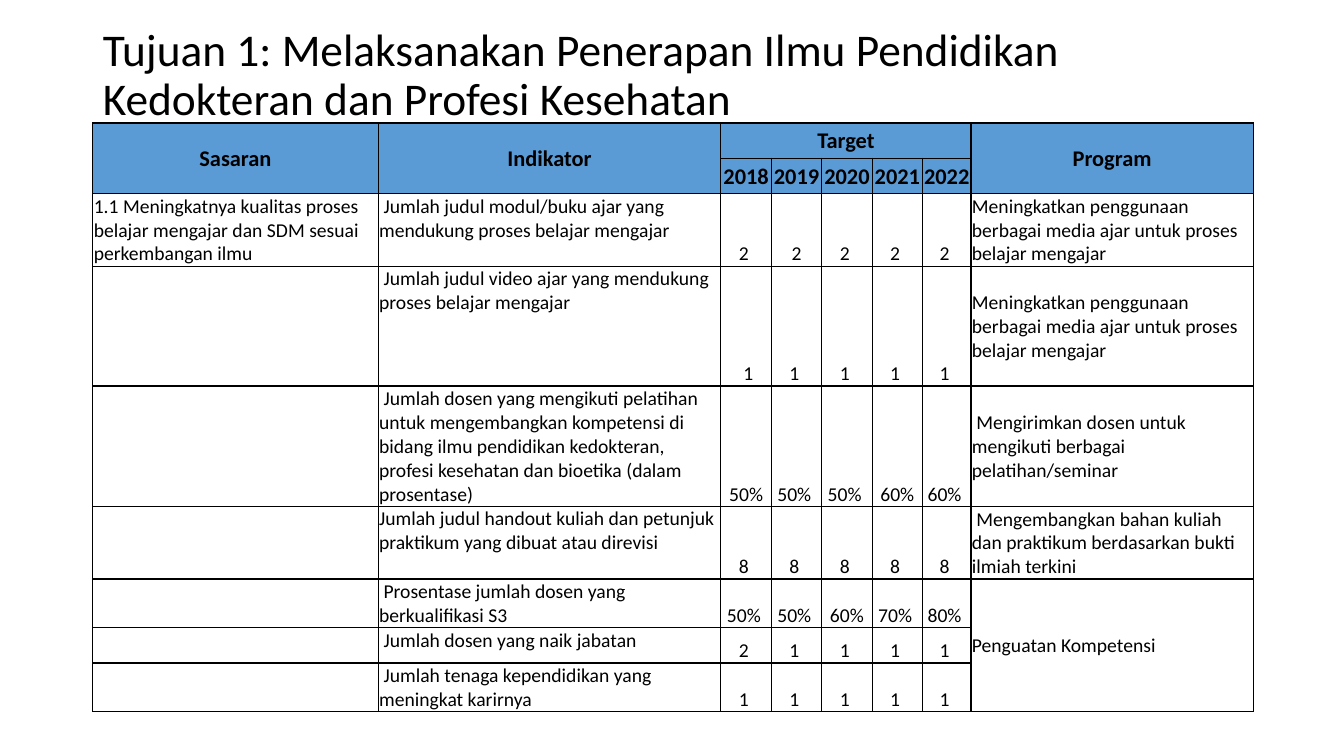
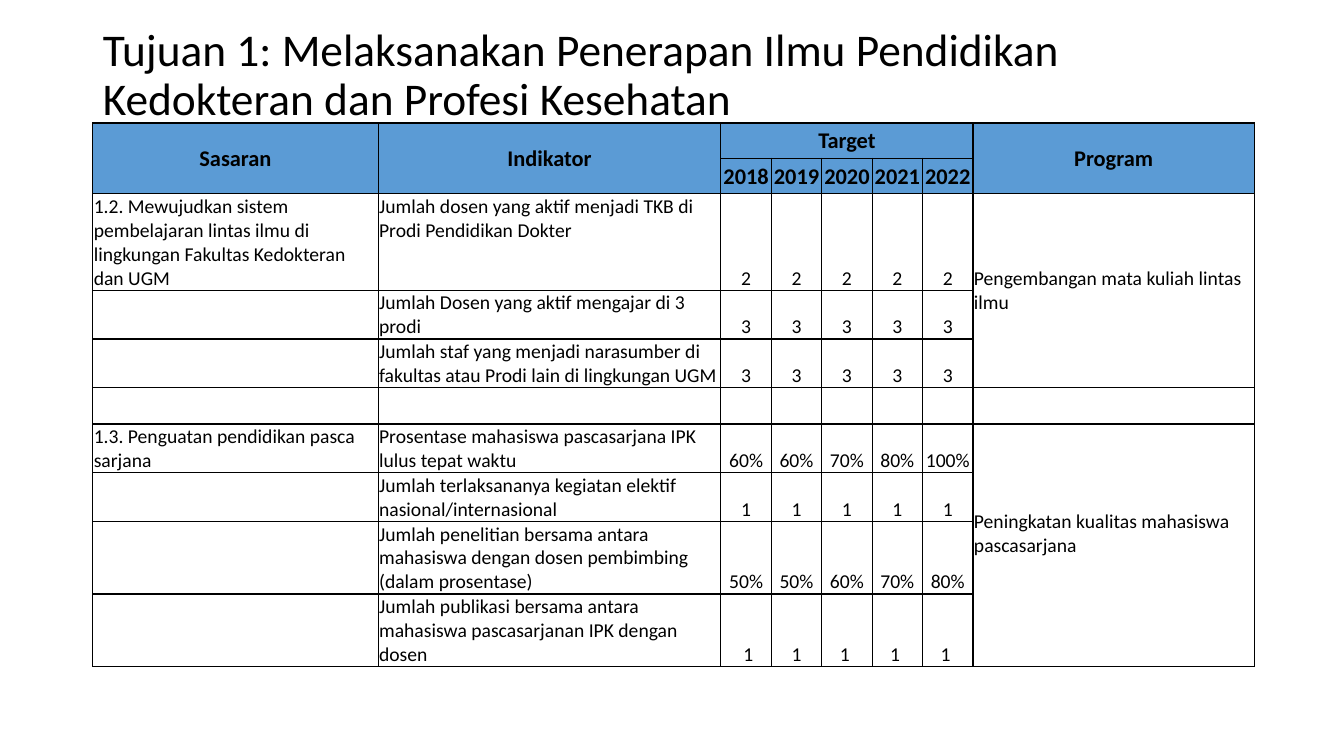
from pptx import Presentation
from pptx.dml.color import RGBColor
from pptx.enum.text import MSO_ANCHOR as Anchor, MSO_AUTO_SIZE as Fit, PP_ALIGN as Align
from pptx.oxml import parse_xml
from pptx.oxml.ns import nsdecls
from pptx.util import Inches, Pt

BLACK = RGBColor(0x00, 0x00, 0x00)
BLUE = RGBColor(0x5B, 0x9B, 0xD5)
FONT = "Calibri"
TITLE = "Tujuan 1: Melaksanakan Penerapan Ilmu Pendidikan Kedokteran dan Profesi Kesehatan"
YEARS = ["2018", "2019", "2020", "2021", "2022"]
HEAD = [
    ["Sasaran", "Indikator", "Target", "", "", "", "", "Program"],
    ["", "", *YEARS, ""],
]
HEAD_H = 0.35
LAST = 7
MEDIA = "Meningkatkan penggunaan berbagai media ajar untuk proses belajar mengajar"

SKILLS = [
    (0.72, "1.1 Meningkatnya kualitas proses belajar mengajar dan SDM sesuai perkembangan ilmu",
     " Jumlah judul modul/buku ajar yang mendukung proses belajar mengajar",
     "2 |2|2 |2 |2 ", MEDIA),
    (1.19, "", " Jumlah judul video ajar yang mendukung proses belajar mengajar",
     " 1|1 |1 |1 |1 ", MEDIA),
    (1.19, "", " Jumlah dosen yang mengikuti pelatihan untuk mengembangkan kompetensi di bidang "
     "ilmu pendidikan kedokteran, profesi kesehatan dan bioetika (dalam prosentase)",
     "50%|50% |50% |60%|60% ", " Mengirimkan dosen untuk mengikuti berbagai pelatihan/seminar"),
    (0.72, "", "Jumlah judul handout kuliah dan petunjuk praktikum yang dibuat atau direvisi",
     "8 |8 |8 |8 |8 ",
     " Mengembangkan bahan kuliah dan praktikum berdasarkan bukti ilmiah terkini"),
    (0.48, "", " Prosentase jumlah dosen yang berkualifikasi S3",
     "50% |50% |60%|70% |80% ", "Penguatan Kompetensi"),
    (0.35, "", " Jumlah dosen yang naik jabatan", "2 |1 |1 |1 |1 ", None),
    (0.48, "", " Jumlah tenaga kependidikan yang meningkat karirnya",
     "1 |1 |1 |1 |1 ", None),
]
CROSS = [
    (0.96, "1.2. Mewujudkan sistem pembelajaran lintas ilmu di lingkungan Fakultas Kedokteran dan UGM",
     "Jumlah dosen yang aktif menjadi TKB di Prodi Pendidikan Dokter",
     "2|2|2|2|2", "Pengembangan mata kuliah lintas ilmu"),
    (0.48, "", "Jumlah Dosen yang aktif mengajar di 3 prodi", "3|3|3|3|3", None),
    (0.48, "", "Jumlah staf yang menjadi narasumber di fakultas atau Prodi lain di lingkungan UGM",
     "3|3|3|3|3", None),
    (0.36, "", "", "||||", ""),
    (0.48, "1.3. Penguatan pendidikan pasca sarjana",
     "Prosentase mahasiswa pascasarjana IPK lulus tepat waktu",
     "60%|60%|70%|80%|100%", "Peningkatan kualitas mahasiswa pascasarjana"),
    (0.48, "", "Jumlah terlaksananya kegiatan elektif nasional/internasional",
     "1|1|1|1|1", None),
    (0.72, "", "Jumlah penelitian bersama antara mahasiswa dengan dosen pembimbing (dalam prosentase)",
     "50%|50%|60%|70%|80%", None),
    (0.72, "", "Jumlah publikasi bersama antara mahasiswa pascasarjanan IPK dengan dosen",
     " 1|1|1 |1 |1 ", None),
]


class Deck:
    """Holds the shared style and the current slide."""

    def __init__(self):
        self.prs = Presentation()
        self.prs.slide_width = Inches(13.33)
        self.prs.slide_height = Inches(7.5)
        self.slide = None

    def style(self, para, size, bold=False, align=Align.LEFT):
        para.alignment = align
        for run in para.runs:
            font = run.font
            font.name, font.size, font.bold = FONT, Pt(size), bold
            font.color.rgb = BLACK

    def page(self, title):
        self.slide = self.prs.slides.add_slide(self.prs.slide_layouts[5])
        box = self.slide.shapes.title
        box.left, box.top = Inches(0.92), Inches(0.4)
        box.width, box.height = Inches(11.5), Inches(0.71)
        frame = box.text_frame
        frame.text = title
        frame.word_wrap = True
        frame.auto_size = Fit.NONE
        frame.vertical_anchor = Anchor.MIDDLE
        para = frame.paragraphs[0]
        para.line_spacing = 0.9
        self.style(para, 32.4)

    def border(self, cell):
        props = cell._tc.get_or_add_tcPr()
        for side in ("lnL", "lnR", "lnT", "lnB"):
            props.append(parse_xml(
                f'<a:{side} {nsdecls("a")} w="{Pt(1)}"><a:solidFill>'
                f'<a:srgbClr val="{BLACK}"/></a:solidFill></a:{side}>'))

    def cell(self, cell, text, col, head):
        cell.margin_left = cell.margin_right = cell.margin_top = Inches(0.01)
        cell.margin_bottom = 0
        self.border(cell)
        if head:
            cell.fill.solid()
            cell.fill.fore_color.rgb = BLUE
        else:
            cell.fill.background()
        if head or col == LAST:
            cell.vertical_anchor = Anchor.MIDDLE
        else:
            cell.vertical_anchor = Anchor.TOP if col == 1 else Anchor.BOTTOM
        cell.text_frame.text = text or ""
        mid = head or 1 < col < LAST
        self.style(cell.text_frame.paragraphs[0], 16 if head else 14, head,
                   Align.CENTER if mid else Align.LEFT)

    def table(self, widths, plan):
        rows = HEAD + [[aim, sign, *goals.split("|"), work]
                       for _, aim, sign, goals, work in plan]
        highs = [HEAD_H] * len(HEAD) + [item[0] for item in plan]
        grid = self.slide.shapes.add_table(
            len(rows), len(widths), Inches(0.92), Inches(1.22),
            Inches(sum(widths)), Inches(sum(highs))).table
        grid.first_row = grid.horz_banding = False
        for col, width in zip(grid.columns, widths):
            col.width = Inches(width)
        for row, high in zip(grid.rows, highs):
            row.height = Inches(high)
        for r, row in enumerate(rows):
            for c, text in enumerate(row):
                self.cell(grid.cell(r, c), text, c, r < len(HEAD))
        for c in (0, 1, LAST):
            grid.cell(0, c).merge(grid.cell(1, c))
        grid.cell(0, 2).merge(grid.cell(0, LAST - 1))
        self.span(grid, [row[LAST] for row in rows])
        return grid

    def span(self, grid, texts):
        starts = [r for r, text in enumerate(texts) if text is not None]
        for top, end in zip(starts, starts[1:] + [len(texts)]):
            if end - top > 1:
                grid.cell(top, LAST).merge(grid.cell(end - 1, LAST))


def main():
    deck = Deck()
    deck.page(TITLE)
    deck.table([2.83, 3.4, 0.5, 0.5, 0.5, 0.5, 0.48, 2.8], SKILLS)
    deck.page(TITLE)
    grid = deck.table([2.83, 3.4, 0.5, 0.5, 0.5, 0.5, 0.5, 2.79], CROSS)
    grid.cell(6, LAST).margin_bottom = Inches(0.24)
    deck.prs.save("out.pptx")


if __name__ == "__main__":
    main()
